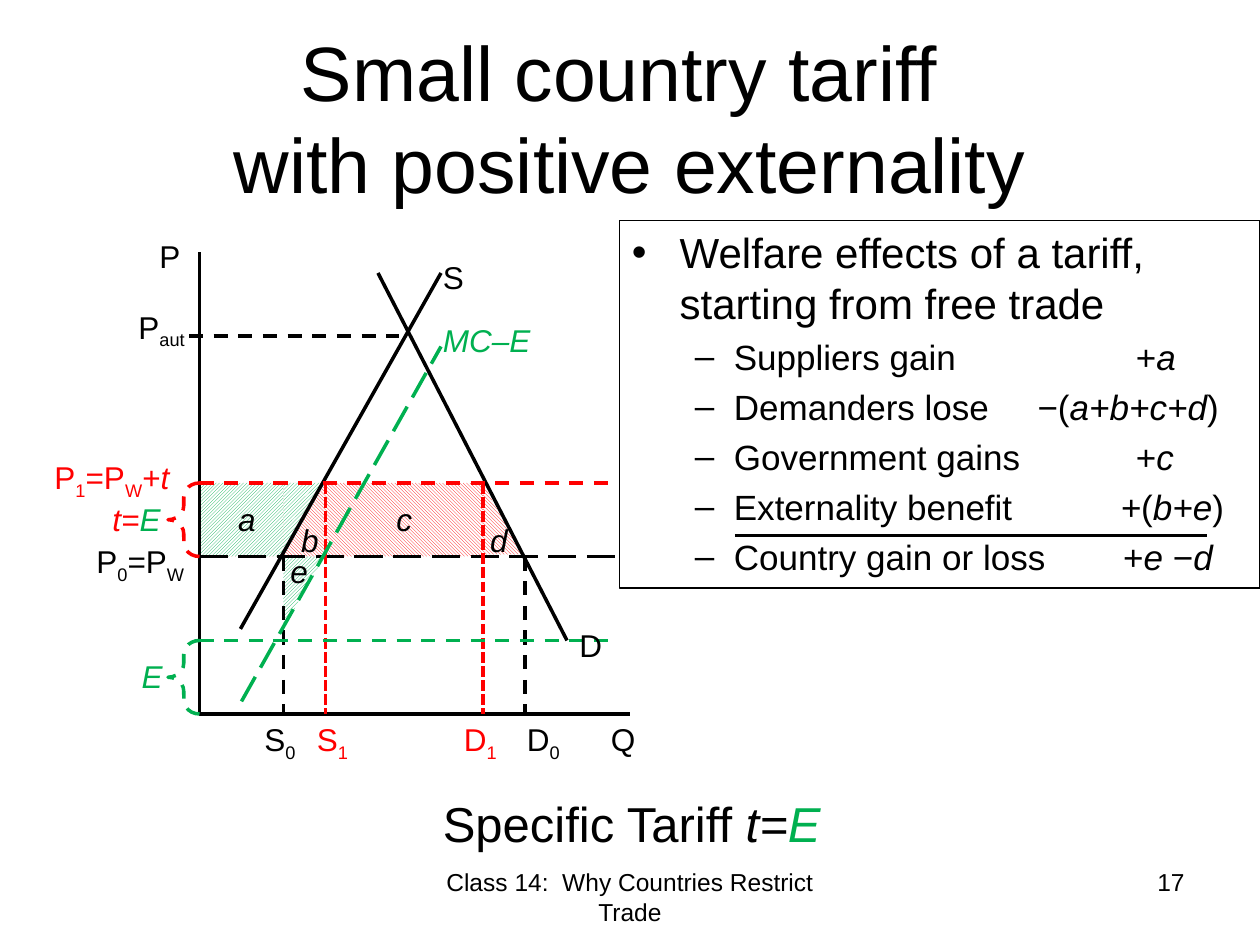
"""Build the slide on a small country tariff with a positive externality."""
import dataclasses
import typing

import lxml.etree
import pptx
import pptx.dml.color
import pptx.enum.dml
import pptx.enum.shapes
import pptx.enum.text
import pptx.oxml.ns
import pptx.util

Dash = pptx.enum.dml.MSO_LINE
Pattern = pptx.enum.dml.MSO_PATTERN
Shape = pptx.enum.shapes.MSO_SHAPE
Align = pptx.enum.text.PP_ALIGN
Anchor = pptx.enum.text.MSO_ANCHOR
qn = pptx.oxml.ns.qn

COLORS = {"black": "000000", "red": "FF0000", "green": "00B050", "white": "FFFFFF"}
COLUMNS, ROWS = 120, 90
CELL = pptx.util.Inches(10) / COLUMNS
LABEL_ROWS = 4.8
AXIS, BASE = 19, 68
WORLD, TARIFF, EXTERNAL = 53, 46, 61
S0, S1, D1, D0 = 27, 31, 46, 50


class Span(typing.NamedTuple):
    text: str
    color: str = "black"
    italic: bool = False
    sub: bool = False


@dataclasses.dataclass
class Label:
    column: float
    row: float
    columns: float
    spans: list[Span]
    size: int = 18
    align: Align = Align.LEFT
    rows: float = LABEL_ROWS
    anchor: Anchor = Anchor.TOP
    wrap: bool = True


class Line(typing.NamedTuple):
    start: tuple[float, float]
    end: tuple[float, float]
    color: str = "black"
    dash: Dash = Dash.SOLID


class Area(typing.NamedTuple):
    kind: Shape
    box: tuple[float, float, float, float]
    color: str
    pattern: Pattern
    flip: bool = False


class Bullet(typing.NamedTuple):
    spans: list[Span]
    mark: str = "–"
    size: int = 20
    margin: float = 0.81
    hang: float = 0.31
    tab: float = 0


def italic(text: str, color: str = "black") -> Span:
    return Span(text, color, italic=True)


def sub(text: str, color: str = "black") -> Span:
    return Span(text, color, sub=True)


def grid(*cells: float) -> list[int]:
    return [round(cell * CELL) for cell in cells]


def rgb(color: str) -> pptx.dml.color.RGBColor:
    return pptx.dml.color.RGBColor.from_string(COLORS[color])


def apply(target: typing.Any, values: dict[str, typing.Any]) -> None:
    for name, value in values.items():
        setattr(target, name, value)


def stroke(line: typing.Any, color: str, dash: Dash, width: float = 2) -> None:
    line.color.rgb = rgb(color)
    apply(line, {"width": pptx.util.Pt(width), "dash_style": dash})


def write(para: typing.Any, spans: list[Span], size: int) -> None:
    for item in spans:
        for index, text in enumerate(item.text.split("\n")):
            if index:
                para.add_line_break()
            span = para.add_run()
            span.text = text
            apply(span.font, {"name": "Arial", "size": pptx.util.Pt(size), "italic": item.italic})
            span.font.color.rgb = rgb(item.color)
            if item.sub:
                span._r.get_or_add_rPr().set("baseline", "-25000")


def draw_label(page: typing.Any, label: Label) -> None:
    box = page.shapes.add_textbox(*grid(label.column, label.row, label.columns, label.rows))
    apply(box.text_frame, {"word_wrap": label.wrap, "vertical_anchor": label.anchor})
    para = box.text_frame.paragraphs[0]
    para.alignment = label.align
    write(para, label.spans, label.size)


def draw_line(page: typing.Any, line: Line) -> None:
    kind = pptx.enum.shapes.MSO_CONNECTOR.STRAIGHT
    connector = page.shapes.add_connector(kind, *grid(*line.start, *line.end))
    stroke(connector.line, line.color, line.dash)
    lxml.etree.SubElement(connector._element.spPr, qn("a:effectLst"))


def draw_area(page: typing.Any, area: Area) -> None:
    shape = page.shapes.add_shape(area.kind, *grid(*area.box))
    shape.shadow.inherit = False
    shape.line.fill.background()
    shape.fill.patterned()
    shape.fill.pattern = area.pattern
    shape.fill.fore_color.rgb, shape.fill.back_color.rgb = rgb(area.color), rgb("white")
    if area.flip:
        shape._element.spPr.xfrm.set("flipV", "1")


def draw_brace(page: typing.Any, row: float, color: str) -> None:
    brace = page.shapes.add_shape(Shape.LEFT_BRACE, *grid(AXIS - 3, row, 3, WORLD - TARIFF))
    brace.shadow.inherit = False
    brace.fill.background()
    brace.adjustments[0] = 0.44
    stroke(brace.line, color, Dash.DASH)


def draw_bullets(page: typing.Any, bullets: list[Bullet]) -> None:
    box = page.shapes.add_textbox(*grid(59, 21, 61, 35))
    box.text_frame.word_wrap = True
    stroke(box.line, "black", Dash.SOLID, 0.75)
    for index, bullet in enumerate(bullets):
        para = box.text_frame.add_paragraph() if index else box.text_frame.paragraphs[0]
        apply(para, {"level": min(index, 1), "space_before": pptx.util.Pt(bullet.size * 0.23)})
        write(para, bullet.spans, bullet.size)
        format_node = para._p.get_or_add_pPr()
        format_node.set("marL", str(pptx.util.Inches(bullet.margin)))
        format_node.set("indent", str(-pptx.util.Inches(bullet.hang)))
        lxml.etree.SubElement(format_node, qn("a:buFont"), typeface="Arial")
        lxml.etree.SubElement(format_node, qn("a:buChar"), char=bullet.mark)
        if bullet.tab:
            tabs = lxml.etree.SubElement(format_node, qn("a:tabLst"))
            lxml.etree.SubElement(tabs, qn("a:tab"), pos=str(pptx.util.Inches(bullet.tab)), algn="l")


AREAS = [
    Area(Shape.RIGHT_TRIANGLE, (S0, WORLD, 3.9, 6.8), "green", Pattern.DARK_UPWARD_DIAGONAL, True),
    Area(Shape.RECTANGLE, (AXIS, TARIFF, D1 - AXIS, 7), "red", Pattern.DARK_DOWNWARD_DIAGONAL),
    Area(Shape.RIGHT_TRIANGLE, (D1, TARIFF, 3.7, 6.8), "red", Pattern.DARK_DOWNWARD_DIAGONAL),
    Area(Shape.RECTANGLE, (AXIS, TARIFF, S0 - AXIS, 7), "green", Pattern.DARK_UPWARD_DIAGONAL),
    Area(Shape.RIGHT_TRIANGLE, (S0, TARIFF, 3.9, 6.8), "green", Pattern.DARK_UPWARD_DIAGONAL, True),
]
LINES = [
    Line((AXIS, BASE), (60, BASE)), Line((AXIS, BASE), (AXIS, 24)),
    Line((22.9, 59.9), (42, 26)), Line((54, EXTERNAL), (36, 26)),
    Line((AXIS, WORLD), (59, WORLD), dash=Dash.LONG_DASH),
    *[Line((x, WORLD), (x, BASE), dash=Dash.DASH) for x in (D0, S0)],
    Line((AXIS, TARIFF), (58, TARIFF), "red", Dash.DASH),
    *[Line((x, TARIFF), (x, BASE), "red", Dash.SQUARE_DOT) for x in (S1, D1)],
    Line((70, 51), (115, 51)), Line((18, 32), (38, 32), dash=Dash.DASH),
    Line((AXIS, EXTERNAL), (58, EXTERNAL), "green", Dash.DASH),
    Line((23, 66.8), (42, 33), "green", Dash.LONG_DASH),
]
LABELS = [
    Label(6, 3.6, 108, [Span("Small country tariff \nwith positive externality")], 44, Align.CENTER, 15, Anchor.MIDDLE),
    Label(14, 22, 9, [Span("P")]), Label(41, 24, 9, [Span("S")]),
    Label(54, 59, 5, [Span("D")]), Label(57, BASE, 9, [Span("Q")]),
    Label(8, 51, 12, [Span("P"), sub("0"), Span("=P"), sub("W")]),
    Label(12, 28.7, 9, [Span("P"), sub("aut")]),
    *[Label(x, BASE, 6, [Span(name, color), sub(digit, color)]) for x, name, digit, color in (
        (24, "S", "0", "black"), (49, "D", "0", "black"), (29, "S", "1", "red"), (43, "D", "1", "red"))],
    *[Label(x, y, 9, [italic(name)], align=Align.CENTER) for name, x, y in (
        ("a", 19, 47), ("b", 25, 49), ("c", 34, 47), ("d", 43, 49), ("e", 24, 52))],
    Label(7, 47, 12, [italic("t=", "red"), italic("E", "green")], align=Align.CENTER),
    Label(4, 43, 15, [Span("P", "red"), sub("1", "red"), Span("=P", "red"), sub("W", "red"),
                      Span("+", "red"), italic("t", "red")]),
    Label(11, 62, 7, [italic("E", "green")], align=Align.CENTER),
    Label(41, 30, 13, [italic("MC–E", "green")]),
    Label(41, 75, 38.8, [Span("Specific Tariff "), italic("t="), italic("E", "green")], 28, rows=12.5, wrap=False),
    Label(41, 82, 38, [Span("Class 14:  Why Countries Restrict Trade")], 14, Align.CENTER, 6.2),
    Label(86, 82, 28, [Span("17")], 14, Align.RIGHT, 6.2),
]
BULLETS = [
    Bullet([Span("Welfare effects of a tariff, starting from free trade")], "•", 24, 0.38, 0.38),
    Bullet([Span("Suppliers gain\t+"), italic("a")], tab=4),
    Bullet([Span("Demanders lose\t−("), italic("a+b+c+d"), Span(")")], tab=3.22),
    Bullet([Span("Government gains\t+"), italic("c")], tab=4),
    Bullet([Span("Externality benefit\t"), italic("+"), Span("("), italic("b+e"), Span(")")], tab=3.88),
    Bullet([Span("Country gain or loss\t+"), italic("e "), Span("−"), italic("d")], tab=3.9),
]


def main() -> None:
    deck = pptx.Presentation()
    apply(deck, {"slide_width": round(COLUMNS * CELL), "slide_height": round(ROWS * CELL)})
    page = deck.slides.add_slide(deck.slide_layouts[6])
    for draw, items in ((draw_area, AREAS), (draw_line, LINES), (draw_label, LABELS)):
        for item in items:
            draw(page, item)
    draw_brace(page, TARIFF, "red")
    draw_brace(page, EXTERNAL, "green")
    draw_bullets(page, BULLETS)
    deck.save("out.pptx")


if __name__ == "__main__":
    main()
